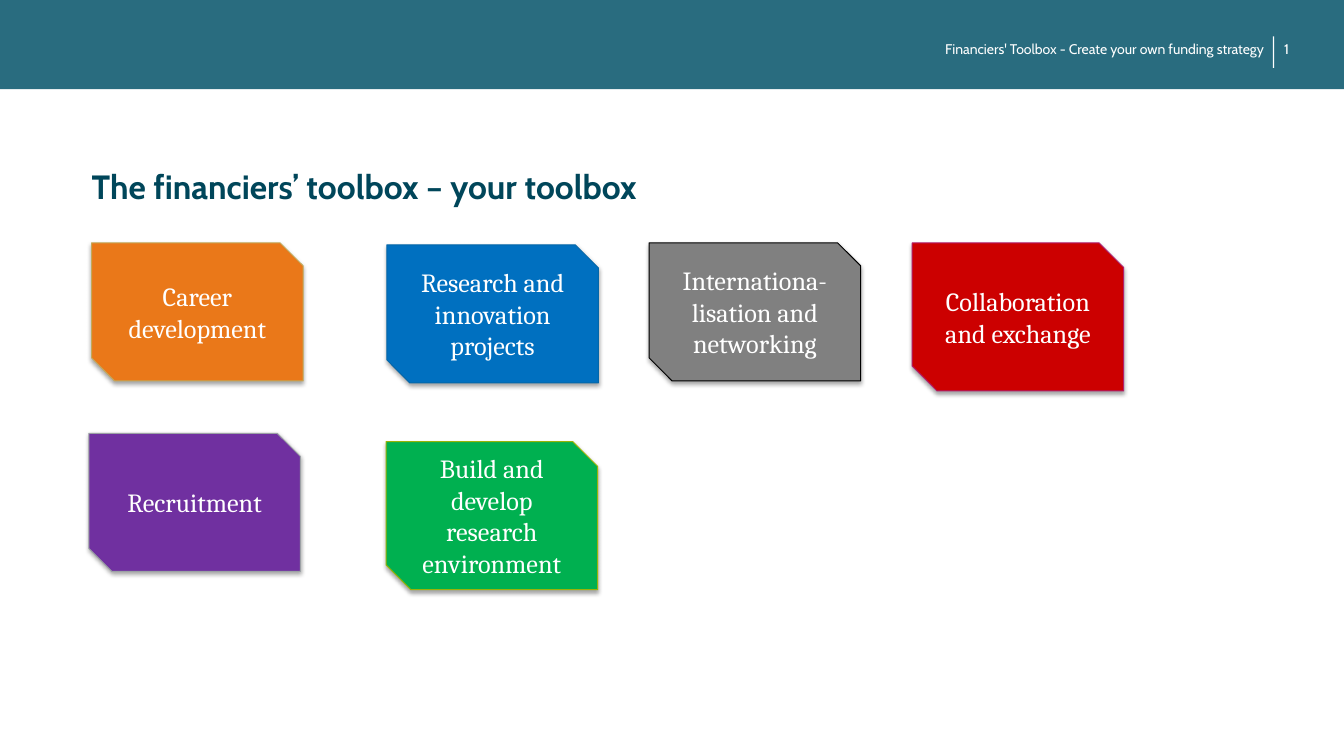
from lxml.etree import SubElement
from pptx import Presentation
from pptx.dml.color import RGBColor
from pptx.enum.shapes import MSO_SHAPE
from pptx.enum.text import MSO_ANCHOR, PP_ALIGN
from pptx.oxml.ns import qn
from pptx.util import Cm, Pt

COLORS = {
    "banner": "296C7F", "title": "00465A", "white": "FFFFFF", "shadow": "000000",
    "blue": "0070C0", "dark blue": "0567A8",
    "orange": "EA7819", "sand": "C3A859",
    "purple": "7030A0", "silver": "9CA1A5",
    "gray": "808080", "black": "000000",
    "red": "CC0000", "magenta": "B11F6C",
    "green": "00B050", "lime": "99B308",
}
HEADING_FONT = "Cabin"
TOOL_FONT = "Cambria"
TOOL_WIDTH = 5.33
LOW, TALL = 3.48, 3.73

# Text, left, top, height, fill, outline
TOOLS = [
    ("Research and innovation projects", 9.75, 6.17, LOW, "blue", "dark blue"),
    ("Career development", 2.31, 6.12, LOW, "orange", "sand"),
    ("Recruitment", 2.24, 10.92, LOW, "purple", "silver"),
    ("Internationa-lisation and networking", 16.36, 6.12, LOW, "gray", "black"),
    ("Collaboration and exchange", 22.99, 6.12, TALL, "red", "magenta"),
    ("Build and develop research environment", 9.73, 11.13, TALL, "green", "lime"),
]


def rgb(name):
    return RGBColor.from_string(COLORS[name])


def add_run(paragraph, text, font, size, color, bold=False):
    run = paragraph.add_run()
    run.text = text
    run.font.name = font
    run.font.size = Pt(size)
    run.font.bold = bold
    run.font.color.rgb = rgb(color)


def add_bar(slide, left, top, width, height, color):
    shape = slide.shapes.add_shape(
        MSO_SHAPE.RECTANGLE, Cm(left), Cm(top), Cm(width), Cm(height))
    shape.shadow.inherit = False
    shape.fill.solid()
    shape.fill.fore_color.rgb = rgb(color)
    shape.line.fill.background()


def add_label(slide, text, left, top, width, height, size, color,
              inset=0.1, align=PP_ALIGN.LEFT, bold=False, spacing=1.0):
    box = slide.shapes.add_textbox(Cm(left), Cm(top), Cm(width), Cm(height))
    frame = box.text_frame
    frame.word_wrap = True
    frame.margin_left = frame.margin_right = Cm(inset)
    frame.margin_top = frame.margin_bottom = Cm(inset)
    paragraph = frame.paragraphs[0]
    paragraph.alignment = align
    paragraph.line_spacing = spacing
    add_run(paragraph, text, HEADING_FONT, size, color, bold)


def add_soft_shadow(shape):
    shape.shadow.inherit = False
    effects = shape._element.spPr.find(qn("a:effectLst"))
    shadow = SubElement(effects, qn("a:outerShdw"), blurRad=str(Pt(3.1)),
                        dist=str(Pt(1.8)), dir="5400000", rotWithShape="0")
    color = SubElement(shadow, qn("a:srgbClr"), val=COLORS["shadow"])
    SubElement(color, qn("a:alpha"), val="35000")


def add_tool(slide, text, left, top, height, fill, outline):
    shape = slide.shapes.add_shape(
        MSO_SHAPE.SNIP_2_DIAG_RECTANGLE,
        Cm(left), Cm(top), Cm(TOOL_WIDTH), Cm(height))
    shape.fill.solid()
    shape.fill.fore_color.rgb = rgb(fill)
    shape.line.color.rgb = rgb(outline)
    shape.line.width = Pt(0.75)
    add_soft_shadow(shape)
    frame = shape.text_frame
    frame.word_wrap = True
    frame.vertical_anchor = MSO_ANCHOR.MIDDLE
    paragraph = frame.paragraphs[0]
    paragraph.alignment = PP_ALIGN.CENTER
    add_run(paragraph, text, TOOL_FONT, 18.7, "white")


def main():
    presentation = Presentation()
    presentation.slide_width = Cm(33.87)
    presentation.slide_height = Cm(19.05)
    slide = presentation.slides.add_slide(presentation.slide_layouts[6])

    # Banner with running title and page number
    add_bar(slide, 0, 0, 33.87, 2.25, "banner")
    add_bar(slide, 32.08, 0.92, 0.03, 0.79, "white")
    add_label(slide, "Financiers' Toolbox - Create your own funding strategy",
              17.07, 0.92, 14.88, 1.02, 10, "white", align=PP_ALIGN.RIGHT)
    add_label(slide, "1", 32.26, 0.92, 1, 1, 10, "white")

    # Slide title
    add_label(slide, "The financiers’ toolbox – your toolbox",
              2.31, 4.29, 29.31, 0.81, 24, "title",
              inset=0, bold=True, spacing=0.92)

    # Toolbox cards
    for tool in TOOLS:
        add_tool(slide, *tool)

    presentation.save("out.pptx")


if __name__ == "__main__":
    main()
